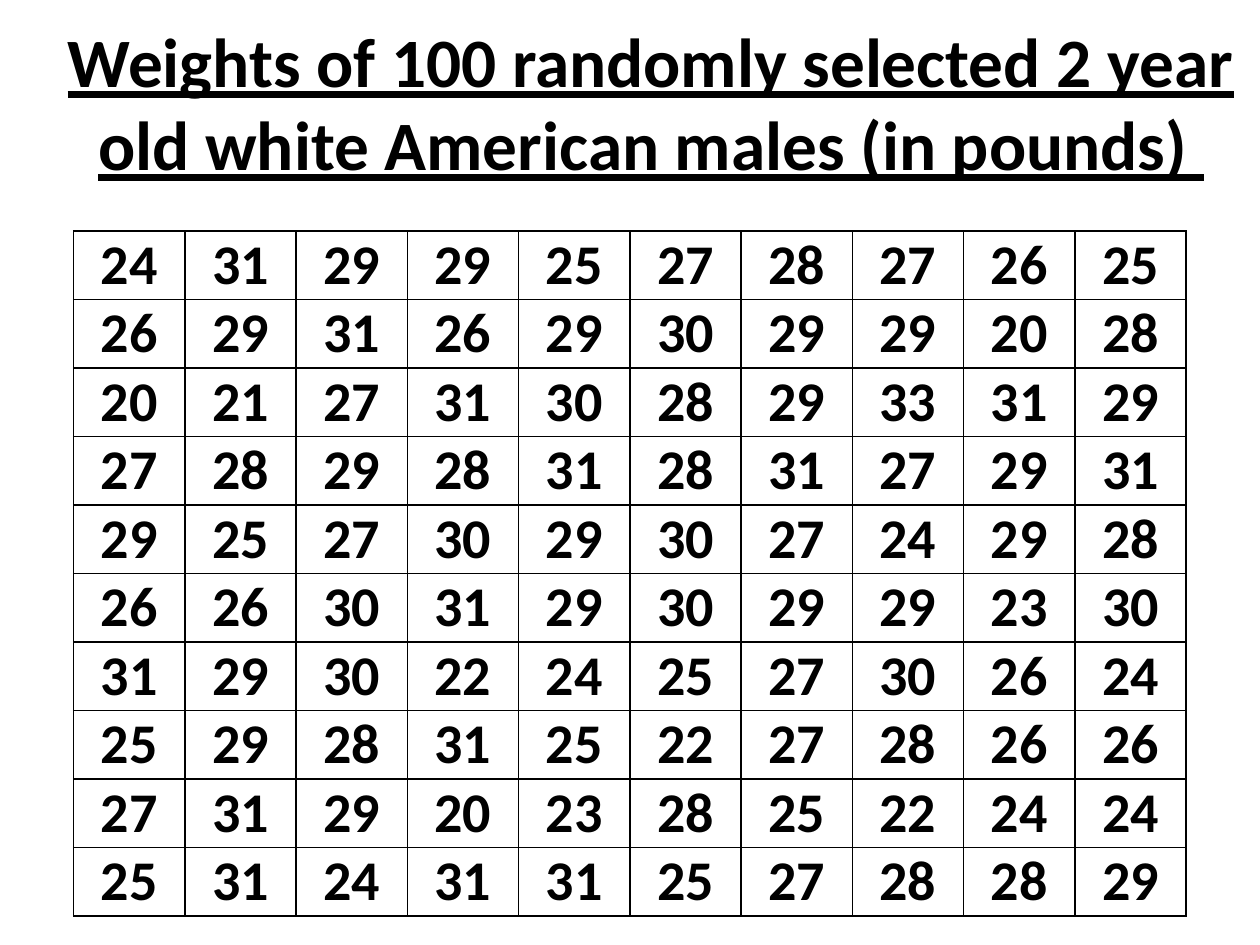
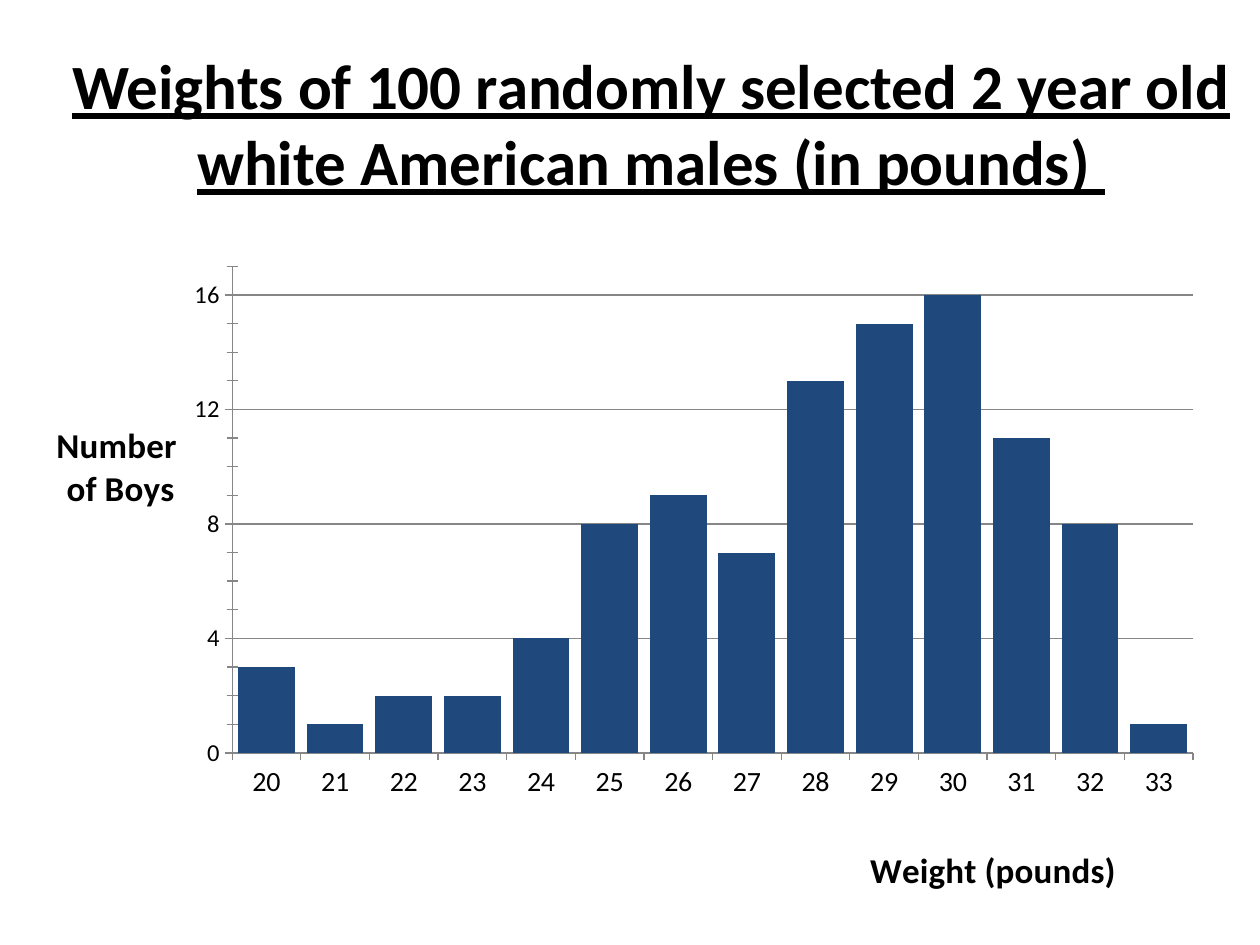
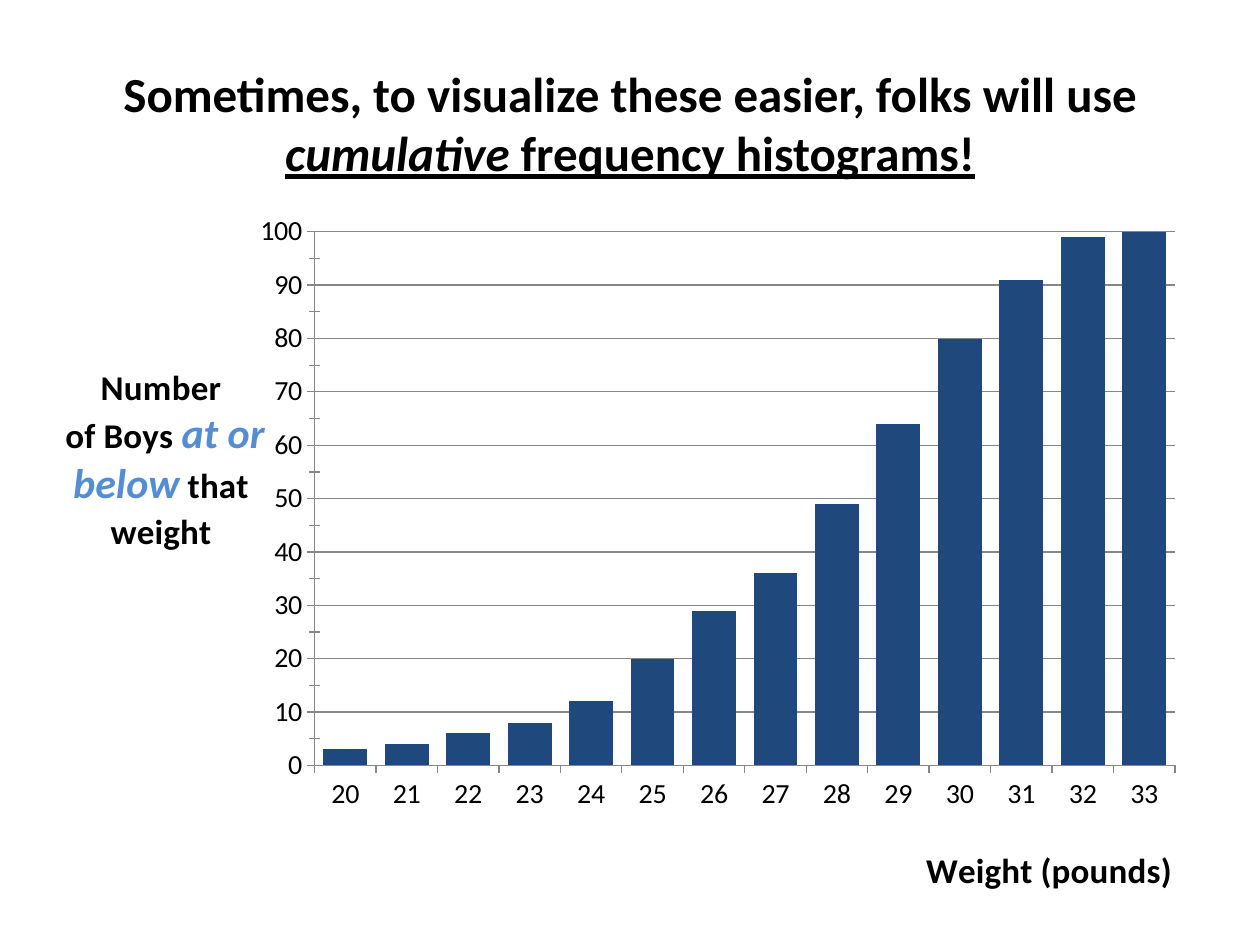
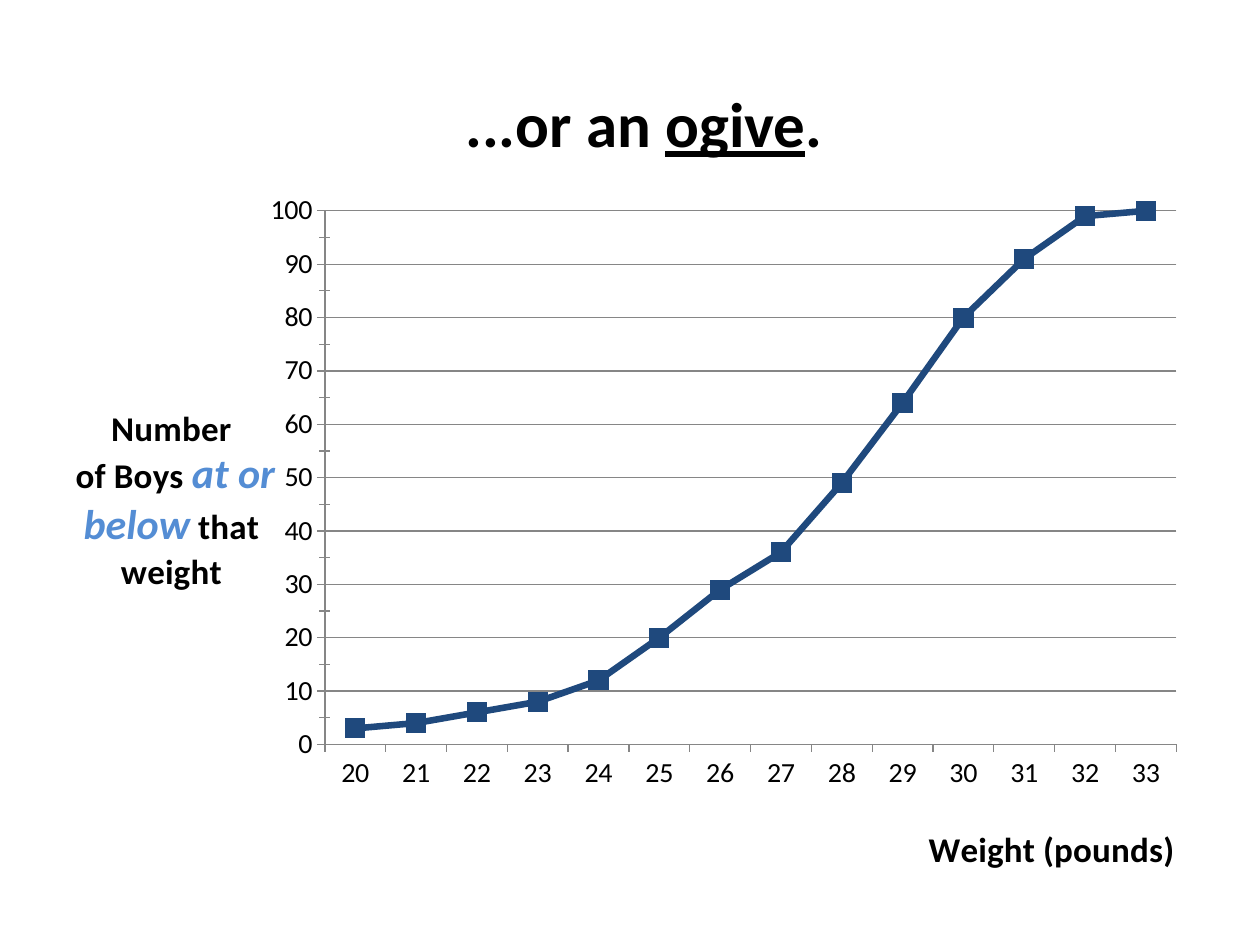
from dataclasses import dataclass
from itertools import accumulate

from lxml.etree import SubElement
from pptx import Presentation
from pptx.chart.data import CategoryChartData
from pptx.dml.color import RGBColor
from pptx.enum.chart import XL_CHART_TYPE, XL_MARKER_STYLE, XL_TICK_MARK
from pptx.enum.text import MSO_ANCHOR, MSO_AUTO_SIZE, PP_ALIGN
from pptx.oxml import parse_xml
from pptx.oxml.ns import nsdecls, qn
from pptx.util import Pt

PX = 7620  # 120 px to the inch


@dataclass(frozen=True)
class Theme:
    font: str = "Calibri"
    ink: str = "000000"
    bar: str = "1F497D"
    accent: str = "548DD4"
    grid: str = "868686"
    cell_size: int = 32
    axis_title_size: int = 20
    accent_size: int = 24
    tick_size: int = 16


theme = Theme()


def add_text(paragraph, text, size, color=theme.ink, bold=True, italic=False, underline=False):
    run = paragraph.add_run()
    run.text = text
    font = run.font
    font.name, font.size = theme.font, Pt(size)
    font.bold, font.italic, font.underline = bold, italic, underline
    font.color.rgb = RGBColor.from_string(color)


def set_layout(element, index, **values):
    """Give a chart part a manual layout, as fractions of the chart."""
    for old_layout in element.findall(qn("c:layout")):
        element.remove(old_layout)
    layout = parse_xml(f"<c:layout {nsdecls('c')}><c:manualLayout/></c:layout>")
    for name, value in values.items():
        SubElement(layout[0], qn(f"c:{name}"), val=str(value))
    element.insert(index, layout)


# Data
weights = [
    [24, 31, 29, 29, 25, 27, 28, 27, 26, 25],
    [26, 29, 31, 26, 29, 30, 29, 29, 20, 28],
    [20, 21, 27, 31, 30, 28, 29, 33, 31, 29],
    [27, 28, 29, 28, 31, 28, 31, 27, 29, 31],
    [29, 25, 27, 30, 29, 30, 27, 24, 29, 28],
    [26, 26, 30, 31, 29, 30, 29, 29, 23, 30],
    [31, 29, 30, 22, 24, 25, 27, 30, 26, 24],
    [25, 29, 28, 31, 25, 22, 27, 28, 26, 26],
    [27, 31, 29, 20, 23, 28, 25, 22, 24, 24],
    [25, 31, 24, 31, 31, 25, 27, 28, 28, 29],
]
boys = [3, 1, 2, 2, 4, 8, 9, 7, 13, 15, 16, 11, 8, 1]
cumulative_boys = list(accumulate(boys))

# Titles: left, top, size and runs, one for each slide
weights_title = "Weights of 100 randomly selected 2 year old white American males (in pounds) "
titles = [
    (40, 0, 39.6, [(weights_title, {"underline": True})]),
    (40, 20, 36, [(weights_title, {"underline": True})]),
    (20, 20, 28, [
        ("Sometimes, to visualize these easier, folks will use ", {}),
        ("cumulative", {"italic": True, "underline": True}),
        (" frequency histograms!", {"underline": True}),
    ]),
    (40, 20, 36, [("...or an ", {}), ("ogive", {"underline": True}), (". ", {})]),
]

presentation = Presentation()
presentation.slide_width, presentation.slide_height = 1200 * PX, 900 * PX

for left, top, size, runs in titles:
    slide = presentation.slides.add_slide(presentation.slide_layouts[5])
    title = slide.shapes.title
    title.left, title.top, title.width, title.height = left * PX, top * PX, 1160 * PX, 193 * PX
    title.text_frame.word_wrap = True
    title.text_frame.auto_size = MSO_AUTO_SIZE.NONE
    title.text_frame.vertical_anchor = MSO_ANCHOR.MIDDLE
    paragraph = title.text_frame.paragraphs[0]
    paragraph.alignment = PP_ALIGN.CENTER
    for text, text_format in runs:
        add_text(paragraph, text, size, **text_format)

# Slide 1: table of weights
column_width, row_height = 106, 64
table = presentation.slides[0].shapes.add_table(
    10, 10, 70 * PX, 220 * PX, 10 * column_width * PX, 10 * row_height * PX
).table
table.first_row = table.horz_banding = False
for column in table.columns:
    column.width = column_width * PX
for row, row_weights in zip(table.rows, weights):
    row.height = row_height * PX
    for cell, weight in zip(row.cells, row_weights):
        cell.fill.background()
        cell.margin_left = cell.margin_right = cell.margin_top = cell.margin_bottom = 0
        cell.vertical_anchor = MSO_ANCHOR.BOTTOM
        paragraph = cell.text_frame.paragraphs[0]
        paragraph.alignment = PP_ALIGN.CENTER
        add_text(paragraph, str(weight), theme.cell_size)
        for index, side in enumerate(("lnL", "lnR", "lnT", "lnB")):
            cell._tc.get_or_add_tcPr().insert(index, parse_xml(
                f'<a:{side} {nsdecls("a")} w="12700"><a:solidFill>'
                f'<a:srgbClr val="{theme.ink}"/></a:solidFill></a:{side}>'
            ))

# Slides 2 to 4: charts
cumulative_label = [
    (" of Boys ", {}),
    ("at or below", {"size": theme.accent_size, "color": theme.accent, "italic": True}),
    (" that weight", {}),
]
cumulative_scale = dict(maximum=100, major=10, minor=5, tick_size=theme.tick_size, number_format="0")
charts = [
    dict(kind=XL_CHART_TYPE.COLUMN_CLUSTERED, frame=(50, 230, 1104, 630), values=boys, gap=21,
         plot=(0.155, 0.038, 0.829, 0.741), label=[(" of Boys", {})],
         label_at=(0.0, 0.27), weight_at=(0.7, 0.91),
         maximum=17, major=4, minor=1, tick_size=14, number_format="General"),
    dict(kind=XL_CHART_TYPE.COLUMN_CLUSTERED, frame=(40, 200, 1100, 660), values=cumulative_boys, gap=40,
         plot=(0.236, 0.032, 0.745, 0.78), label=cumulative_label,
         label_at=(0.01, 0.22), weight_at=(0.76, 0.92), **cumulative_scale),
    dict(kind=XL_CHART_TYPE.LINE_MARKERS, frame=(50, 180, 1090, 660), values=cumulative_boys, gap=None,
         plot=(0.238, 0.032, 0.744, 0.78), label=cumulative_label,
         label_at=(0.01, 0.31), weight_at=(0.76, 0.92), **cumulative_scale),
]
bar_color = RGBColor.from_string(theme.bar)
grid_color = RGBColor.from_string(theme.grid)

for slide, settings in zip(list(presentation.slides)[1:], charts):
    chart_data = CategoryChartData()
    chart_data.categories = [str(weight) for weight in range(20, 34)]
    chart_data.add_series("Series 1", settings["values"])
    frame = [length * PX for length in settings["frame"]]
    chart = slide.shapes.add_chart(settings["kind"], *frame, chart_data).chart
    chart.has_title = chart.has_legend = False
    chart.font.name, chart.font.size = theme.font, Pt(10)
    chart.font.color.rgb = RGBColor.from_string(theme.ink)

    # Bars or line
    plot = chart.plots[0]
    plot.vary_by_categories = False
    series = plot.series[0]
    if settings["gap"] is None:
        series.smooth = False
        series.format.line.color.rgb = bar_color
        series.format.line.width = Pt(3.75)
        marker = series.marker
        marker.style, marker.size = XL_MARKER_STYLE.SQUARE, 11
        marker.format.fill.solid()
        marker.format.fill.fore_color.rgb = bar_color
        marker.format.line.color.rgb = bar_color
    else:
        plot.gap_width = settings["gap"]
        series.format.fill.solid()
        series.format.fill.fore_color.rgb = bar_color
    x, y, width, height = settings["plot"]
    set_layout(chart._chartSpace.chart.plotArea, 0, layoutTarget="inner",
               xMode="edge", yMode="edge", x=x, y=y, w=width, h=height)

    # Scale and grid
    value_axis, category_axis = chart.value_axis, chart.category_axis
    value_axis.minimum_scale, value_axis.maximum_scale = 0, settings["maximum"]
    value_axis.major_unit, value_axis.minor_unit = settings["major"], settings["minor"]
    value_axis.minor_tick_mark = XL_TICK_MARK.CROSS
    value_axis.tick_labels.number_format = settings["number_format"]
    value_axis.tick_labels.number_format_is_linked = False
    value_axis.has_major_gridlines = True
    value_axis.major_gridlines.format.line.color.rgb = grid_color

    # Axis titles, lying flat
    axes = [
        (category_axis, theme.tick_size, [[("Weight (pounds)", {})]], settings["weight_at"]),
        (value_axis, settings["tick_size"], [[("Number", {})], settings["label"]], settings["label_at"]),
    ]
    for axis, tick_size, lines, (x, y) in axes:
        axis.major_tick_mark = XL_TICK_MARK.OUTSIDE
        axis.tick_labels.font.size = Pt(tick_size)
        axis.format.line.color.rgb = grid_color
        text_frame = axis.axis_title.text_frame
        for index, runs in enumerate(lines):
            paragraph = text_frame.add_paragraph() if index else text_frame.paragraphs[0]
            paragraph.alignment = PP_ALIGN.CENTER
            for text, text_format in runs:
                add_text(paragraph, text, **{"size": theme.axis_title_size, **text_format})
        title_element = axis.axis_title._element
        body = title_element.find(f".//{qn('a:bodyPr')}")
        body.set("rot", "0")
        body.set("vert", "horz")
        set_layout(title_element, 1, xMode="edge", yMode="edge", x=x, y=y)

presentation.save("out.pptx")
